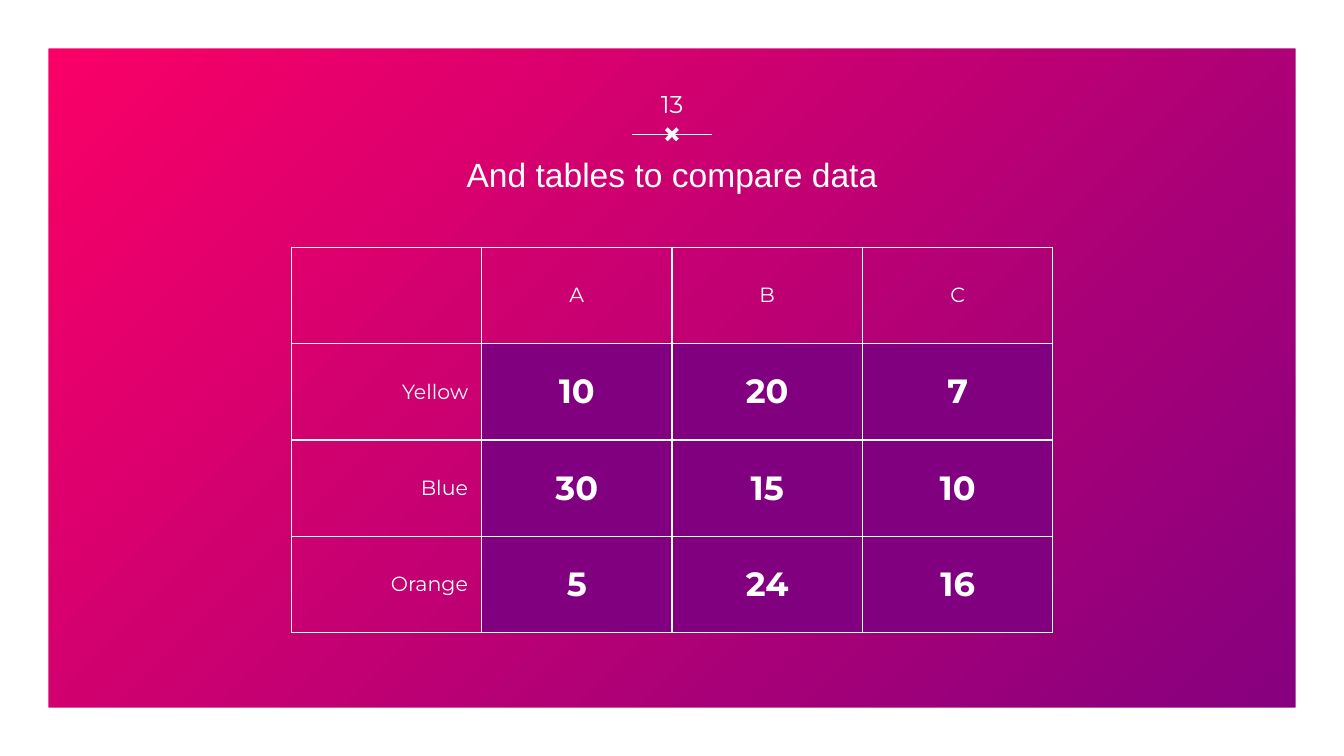
from lxml import etree
from pptx import Presentation
from pptx.dml.color import RGBColor
from pptx.enum.shapes import MSO_CONNECTOR, MSO_SHAPE
from pptx.enum.text import MSO_ANCHOR, PP_ALIGN
from pptx.oxml.ns import qn
from pptx.util import Inches, Pt

WHITE = RGBColor(0xFF, 0xFF, 0xFF)
PINK = RGBColor(0xFF, 0x00, 0x66)
PURPLE = RGBColor(0x80, 0x00, 0x80)

CENTER, RIGHT = PP_ALIGN.CENTER, PP_ALIGN.RIGHT
MIDDLE = MSO_ANCHOR.MIDDLE
FRAME, CROSS = MSO_SHAPE.FRAME, MSO_SHAPE.MATH_MULTIPLY
STRAIGHT = MSO_CONNECTOR.STRAIGHT

COLUMNS, ROWS = 100, 56.25
UNIT = Inches(0.1)
LINE_WIDTH = Pt(0.75)
BODY_FONT, TITLE_FONT = "Montserrat", "Arial"

TABLE_ROWS = [
    ["", "A", "B", "C"],
    ["Yellow", "10", "20", "7"],
    ["Blue", "30", "15", "10"],
    ["Orange", "5", "24", "16"],
]


def grid(*lengths):
    return [round(length * UNIT) for length in lengths]


def write(text_frame, text, size=11, font=BODY_FONT, bold=False, align=CENTER):
    paragraph = text_frame.paragraphs[0]
    paragraph.alignment = align
    run = paragraph.add_run()
    run.text = text
    run.font.size = Pt(size)
    run.font.name = font
    run.font.bold = bold
    run.font.color.rgb = WHITE


class SlideBuilder:
    """Draw styled elements on one slide, measured in grid columns and rows."""

    def __init__(self, slide):
        self.slide = slide

    def background(self, start, end):
        fill = self.slide.background.fill
        fill.gradient()
        fill.gradient_angle = 315
        for stop, color, position in zip(fill.gradient_stops, (start, end), (0, 1)):
            stop.color.rgb = color
            stop.position = position

    def shape(self, kind, left, top, width, height, adjustment):
        shape = self.slide.shapes.add_shape(kind, *grid(left, top, width, height))
        shape.adjustments[0] = adjustment
        shape.shadow.inherit = False
        shape.fill.solid()
        shape.fill.fore_color.rgb = WHITE
        shape.line.fill.background()

    def rule(self, left, right, row):
        connector = self.slide.shapes.add_connector(STRAIGHT, *grid(left, row, right, row))
        connector.line.color.rgb = WHITE
        connector.line.width = LINE_WIDTH
        etree.SubElement(connector._element.spPr, qn("a:effectLst"))

    def text(self, text, left, top, width, height, **style):
        box = self.slide.shapes.add_textbox(*grid(left, top, width, height))
        frame = box.text_frame
        frame.word_wrap = True
        frame.vertical_anchor = MIDDLE
        frame.margin_left = frame.margin_right = UNIT
        frame.margin_top = frame.margin_bottom = UNIT
        write(frame, text, **style)

    def borders(self, cell):
        properties = cell._tc.get_or_add_tcPr()
        for side in ("a:lnL", "a:lnR", "a:lnT", "a:lnB"):
            line = etree.SubElement(properties, qn(side), w=str(LINE_WIDTH))
            fill = etree.SubElement(line, qn("a:solidFill"))
            etree.SubElement(fill, qn("a:srgbClr"), val=str(WHITE))

    def table(self, rows, top, column_width, row_height):
        width = column_width * len(rows[0])
        left = (COLUMNS - width) / 2
        place = grid(left, top, width, row_height * len(rows))
        table = self.slide.shapes.add_table(len(rows), len(rows[0]), *place).table
        table.first_row = table.horz_banding = False
        for row_index, row in enumerate(rows):
            for column_index, text in enumerate(row):
                cell = table.cell(row_index, column_index)
                self.cell(cell, text, row_index > 0, column_index > 0)

    def cell(self, cell, text, in_body, in_data):
        cell.vertical_anchor = MIDDLE
        cell.margin_left = cell.margin_right = UNIT
        cell.margin_top = cell.margin_bottom = Inches(0.07)
        self.borders(cell)
        if in_body and in_data:
            cell.fill.solid()
            cell.fill.fore_color.rgb = PURPLE
            write(cell.text_frame, text, size=18, bold=True)
        else:
            cell.fill.background()
            if text:
                write(cell.text_frame, text, align=CENTER if in_data else RIGHT)


def main():
    presentation = Presentation()
    presentation.slide_width, presentation.slide_height = grid(COLUMNS, ROWS)
    builder = SlideBuilder(presentation.slides.add_slide(presentation.slide_layouts[6]))
    builder.background(PINK, PURPLE)
    builder.shape(FRAME, 0, 0, COLUMNS, ROWS, 0.064)
    builder.rule(47, 53, 10)
    builder.shape(CROSS, 49.2, 9.2, 1.6, 1.6, 0.174)
    builder.text("And tables to compare data", 3.6, 10.8, 92.8, 4.3, size=18, font=TITLE_FONT)
    builder.table(TABLE_ROWS, top=18.4, column_width=14.17, row_height=7.17)
    builder.text("13", 47, 5.6, 6, 4.3, size=13)
    presentation.save("out.pptx")


if __name__ == "__main__":
    main()
